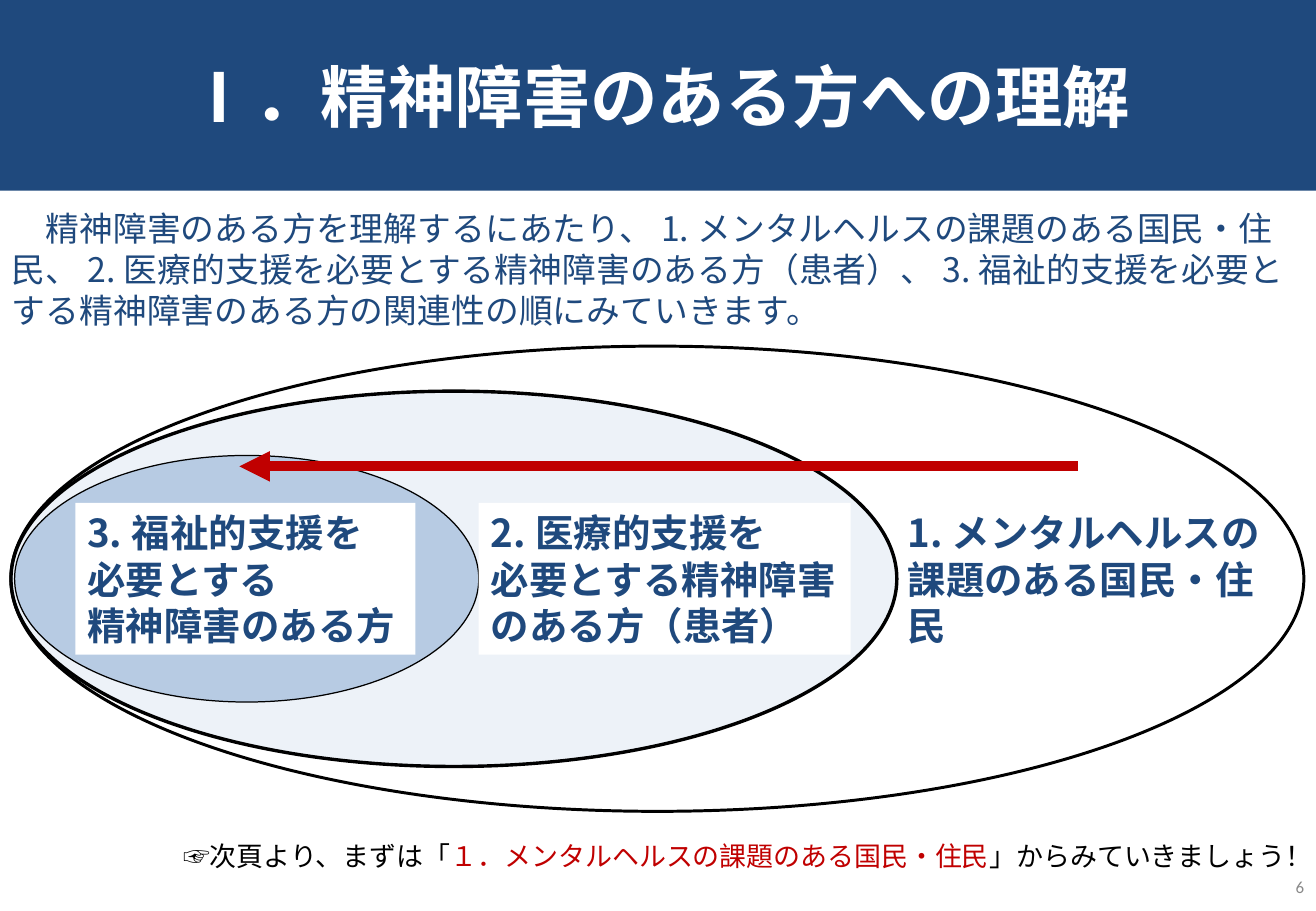
from dataclasses import dataclass
from lxml.etree import SubElement
from pptx import Presentation
from pptx.dml.color import RGBColor as Rgb
from pptx.enum.shapes import MSO_CONNECTOR as Link, MSO_SHAPE as Kind
from pptx.enum.text import MSO_ANCHOR as Anchor, MSO_AUTO_SIZE as Auto, PP_ALIGN as Align
from pptx.oxml.ns import qn
from pptx.util import Emu, Pt


@dataclass(frozen=True)
class Theme:
    """Colours, fonts and type sizes of the slide."""
    navy: str = "1F497D"
    white: str = "FFFFFF"
    black: str = "000000"
    red: str = "C00000"
    pale: str = "B9CDE5"
    blue: str = "4F81BD"
    grey: str = "898989"
    sans: str = "Noto Sans CJK JP"
    latin: str = "Calibri"
    head: float = 40
    label: float = 22.8
    body: float = 20
    note: float = 16
    page: float = 10
    pitch: float = 1.21


LOOK = Theme()
SCALE = 9144


def px(*sizes):
    """Turn px lengths into EMU."""
    return [Emu(size * SCALE) for size in sizes]


def style(frame, size, color, bold=False, align=Align.LEFT, face=LOOK.sans):
    """Format every paragraph of a text frame."""
    frame.word_wrap = True
    frame.auto_size = Auto.NONE
    frame.vertical_anchor = Anchor.MIDDLE
    for para in frame.paragraphs:
        para.alignment = align
        para.line_spacing = Pt(size * LOOK.pitch)
        font = para.font
        font.size, font.bold, font.name = Pt(size), bold, face
        font.color.rgb = Rgb.from_string(color)
        base = para._p.pPr.find(qn("a:defRPr"))
        SubElement(base, qn("a:ea")).set("typeface", face)


def write(slide, box, text, size, color, fill=None, **look):
    """Add a text box, filled if a colour is given."""
    shape = slide.shapes.add_textbox(*px(*box))
    if fill:
        shape.fill.solid()
        shape.fill.fore_color.rgb = Rgb.from_string(fill)
    shape.text_frame.text = text
    style(shape.text_frame, size, color, **look)
    return shape


def oval(slide, box, color, alpha, width):
    """Add an outlined ellipse with a see-through fill."""
    shape = slide.shapes.add_shape(Kind.OVAL, *px(*box))
    shape.shadow.inherit = False
    shape.fill.solid()
    shape.fill.fore_color.rgb = Rgb.from_string(color)
    tint = shape._element.spPr.find(qn("a:solidFill"))[0]
    SubElement(tint, qn("a:alpha")).set("val", str(alpha * 1000))
    shape.line.color.rgb = Rgb.from_string(LOOK.black)
    shape.line.width = Pt(width)


def arrow(slide, start, end):
    """Add the thick red arrow between two points."""
    line = slide.shapes.add_connector(Link.STRAIGHT, *px(*start, *end))
    line.line.color.rgb = Rgb.from_string(LOOK.red)
    line.line.width = Pt(6)
    SubElement(line.line._get_or_add_ln(), qn("a:tailEnd")).set("type", "triangle")
    SubElement(line._element.spPr, qn("a:effectLst"))


def banner(slide, box):
    """Fill the title placeholder as a navy banner."""
    title = slide.shapes.title
    title.left, title.top, title.width, title.height = px(*box)
    title.fill.solid()
    title.fill.fore_color.rgb = Rgb.from_string(LOOK.navy)
    title.text_frame.text = "Ⅰ．精神障害のある方への理解"
    style(title.text_frame, LOOK.head, LOOK.white, bold=True, align=Align.CENTER)


def intro(slide, box):
    """Place the opening paragraph."""
    text = ("　精神障害のある方を理解するにあたり、1.メンタルヘルスの課題のある国民・住民、"
            "2.医療的支援を必要とする精神障害のある方（患者）、"
            "3.福祉的支援を必要とする精神障害のある方の関連性の順にみていきます。")
    write(slide, box, text, LOOK.body, LOOK.navy)


def diagram(slide, box):
    """Draw the nested groups, their labels and the arrow."""
    left, top, width, height = box
    mid = top + height // 2
    rings = [(0, width, height, LOOK.white, 100, 1.75),
             (0, 729, 309, LOOK.pale, 25, 2),
             (3, 382, 203, LOOK.blue, 34, 0.75)]
    for dx, wide, high, color, alpha, line in rings:
        oval(slide, (left + dx, mid - high // 2, wide, high), color, alpha, line)
    labels = [(728, 328, 87, None, "1.メンタルヘルスの\n課題のある国民・住民"),
              (53, 280, 125, LOOK.white, "3.福祉的支援を\n必要とする\n精神障害のある方"),
              (385, 306, 125, LOOK.white, "2.医療的支援を\n必要とする精神障害のある方（患者）")]
    for dx, wide, high, fill, text in labels:
        place = (left + dx, mid - high // 2, wide, high)
        write(slide, place, text, LOOK.label, LOOK.navy, fill, bold=True)
    arrow(slide, (left + 878, top + 99), (left + 188, top + 99))


def footer(slide, box):
    """Place the pointer to the next page and the page number."""
    left, top, width, height = box
    parts = ["☞次頁より、まずは「", "１．メンタルヘルスの課題のある国民・住民", "」からみていきましょう！"]
    note = write(slide, (left + 124, top, 944, 37), "", LOOK.note, LOOK.black, align=Align.RIGHT)
    for part, color in zip(parts, (LOOK.black, LOOK.red, LOOK.black)):
        run = note.text_frame.paragraphs[0].add_run()
        run.text = part
        run.font.color.rgb = Rgb.from_string(color)
    corner = (left + width - 41, top + height - 40, 41, 40)
    write(slide, corner, "6", LOOK.page, LOOK.grey, align=Align.RIGHT, face=LOOK.latin)


def main():
    """Build the slide and save it."""
    deck = Presentation()
    deck.slide_width, deck.slide_height = px(1083, 750)
    slide = deck.slides.add_slide(deck.slide_layouts[5])
    banner(slide, (0, 0, 1083, 157))
    intro(slide, (0, 166, 1083, 111))
    diagram(slide, (9, 285, 1064, 383))
    footer(slide, (0, 686, 1083, 64))
    deck.save("out.pptx")


if __name__ == "__main__":
    main()
